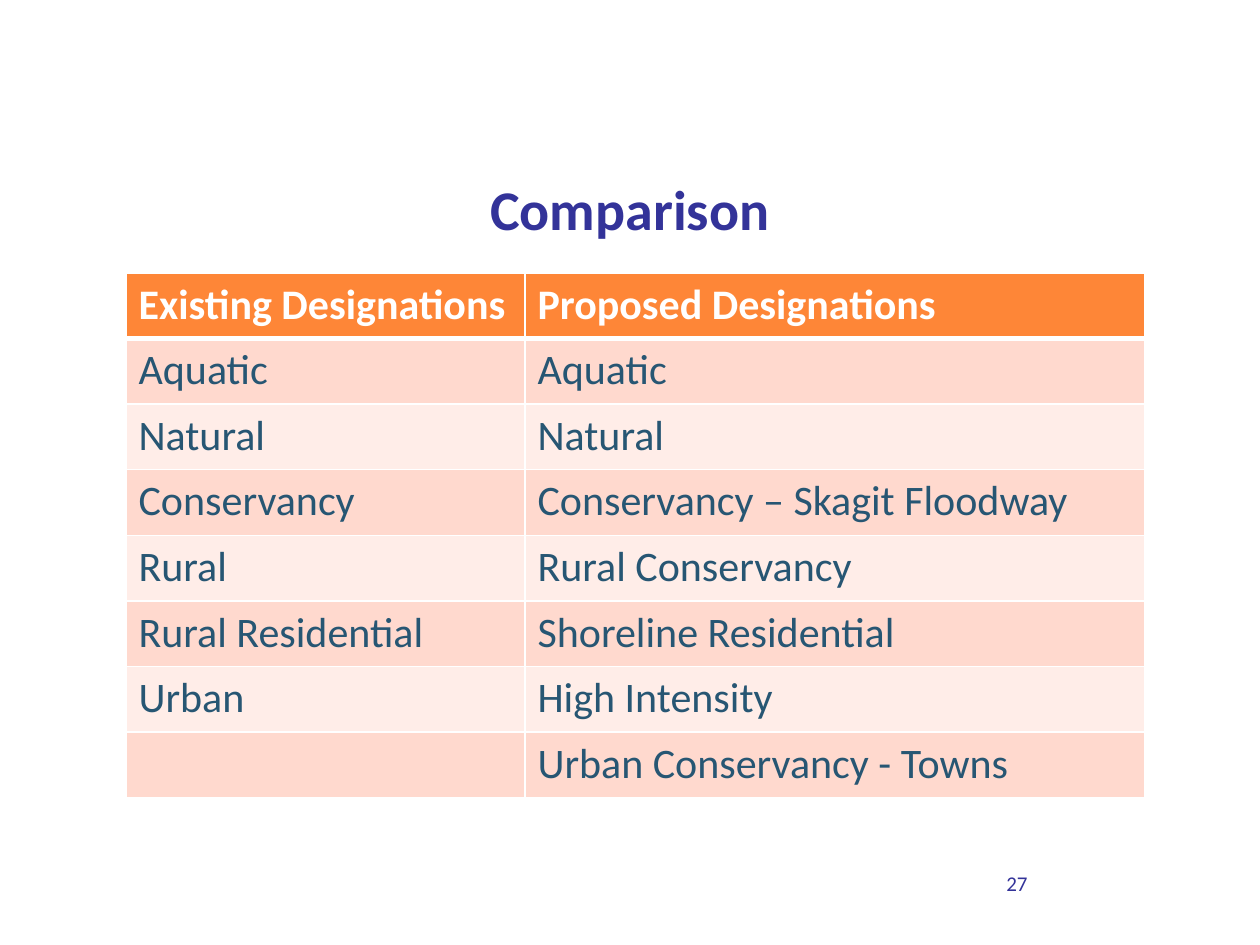
from pptx import Presentation
from pptx.dml.color import RGBColor
from pptx.enum.text import MSO_ANCHOR, PP_ALIGN
from pptx.oxml.ns import qn
from pptx.util import Pt
from lxml.etree import SubElement

EMU_PER_PX = 914400 / 126
FONT = "Calibri"
COLORS = {
    "navy": "333399",
    "teal": "275673",
    "white": "FFFFFF",
    "orange": "FE8637",
    "dark_band": "FFD9CE",
    "light_band": "FFEDE8",
}
DESIGNATIONS = [
    ("Existing Designations", "Proposed Designations"),
    ("Aquatic", "Aquatic"),
    ("Natural", "Natural"),
    ("Conservancy", "Conservancy – Skagit Floodway"),
    ("Rural", "Rural Conservancy"),
    ("Rural Residential", "Shoreline Residential"),
    ("Urban", "High Intensity"),
    ("", "Urban Conservancy - Towns"),
]


def px(length):
    return round(length * EMU_PER_PX)


def color(name):
    return RGBColor.from_string(COLORS[name])


def add_run(paragraph, text, size, color_name, bold=False):
    run = paragraph.add_run()
    run.text = text
    run.font.name = FONT
    run.font.size = Pt(size)
    run.font.bold = bold
    run.font.color.rgb = color(color_name)


def add_text(slide, box, text, size, align, anchor, bold=False):
    frame = slide.shapes.add_textbox(*map(px, box)).text_frame
    frame.word_wrap = True
    frame.vertical_anchor = anchor
    paragraph = frame.paragraphs[0]
    paragraph.alignment = align
    add_run(paragraph, text, size, "navy", bold)


def set_borders(cell, top, bottom):
    properties = cell._tc.get_or_add_tcPr()
    for side, width in (("L", 1), ("R", 1), ("T", top), ("B", bottom)):
        line = SubElement(properties, qn(f"a:ln{side}"), w=str(Pt(width)))
        fill = SubElement(line, qn("a:solidFill"))
        SubElement(fill, qn("a:srgbClr"), val=COLORS["white"])


def add_designations(slide, left, top, widths, height):
    table = slide.shapes.add_table(
        len(DESIGNATIONS), len(widths),
        px(left), px(top), px(sum(widths)), px(height),
    ).table
    for column, width in zip(table.columns, widths):
        column.width = px(width)

    for row, names in enumerate(DESIGNATIONS):
        header = row == 0
        band = "orange" if header else "dark_band" if row % 2 else "light_band"
        for column, name in enumerate(names):
            cell = table.cell(row, column)
            # The rule below the header is heavier than the others
            set_borders(cell, top=3 if row == 1 else 1, bottom=3 if header else 1)
            cell.fill.solid()
            cell.fill.fore_color.rgb = color(band)
            if name:
                add_run(cell.text_frame.paragraphs[0], name, 24,
                        "white" if header else "teal", header)


def main():
    presentation = Presentation()
    presentation.slide_width = px(1260)
    presentation.slide_height = px(945)
    slide = presentation.slides.add_slide(presentation.slide_layouts[6])

    # Heading
    add_text(slide, (63, 168, 1134, 662), "Comparison", 32,
             PP_ALIGN.CENTER, MSO_ANCHOR.TOP, bold=True)
    # Page number
    add_text(slide, (809, 861, 231, 44), "27", 12,
             PP_ALIGN.RIGHT, MSO_ANCHOR.MIDDLE)
    # Existing and proposed designations
    add_designations(slide, 126, 273, (399, 620), 525)

    presentation.save("out.pptx")


if __name__ == "__main__":
    main()
